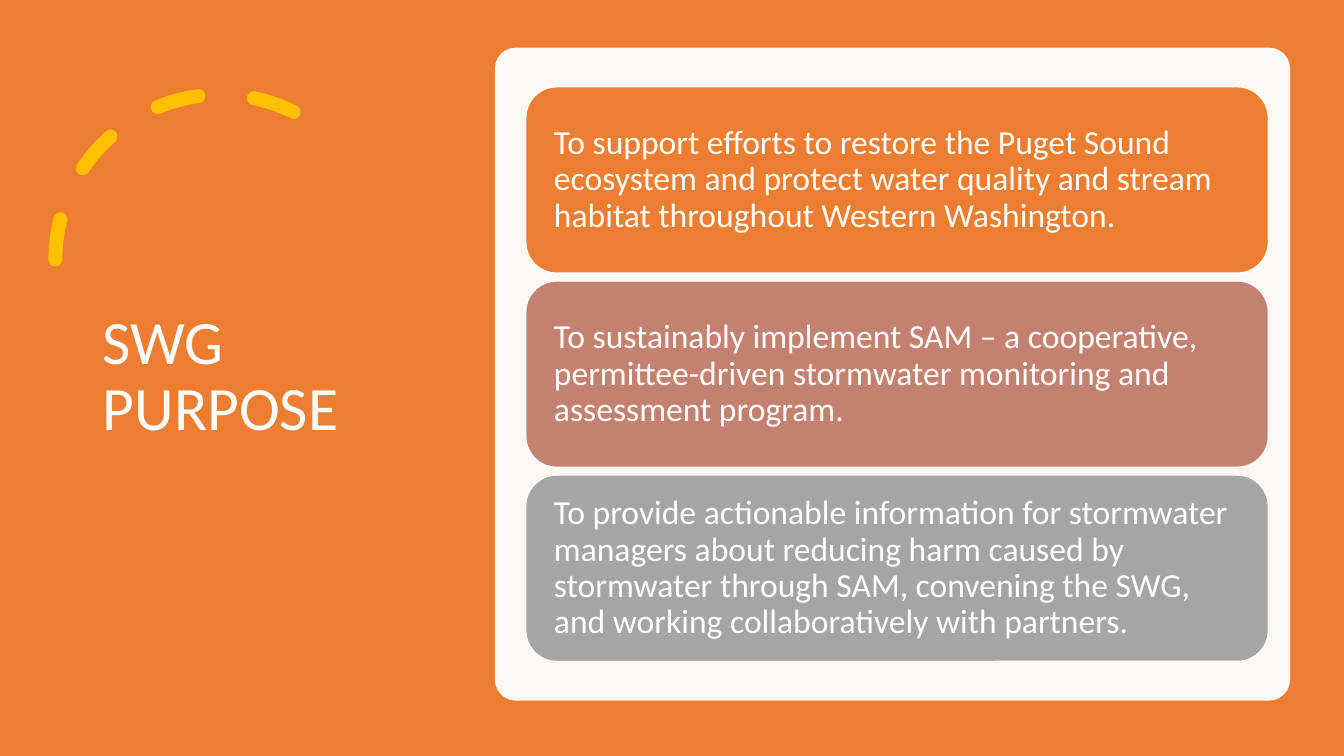
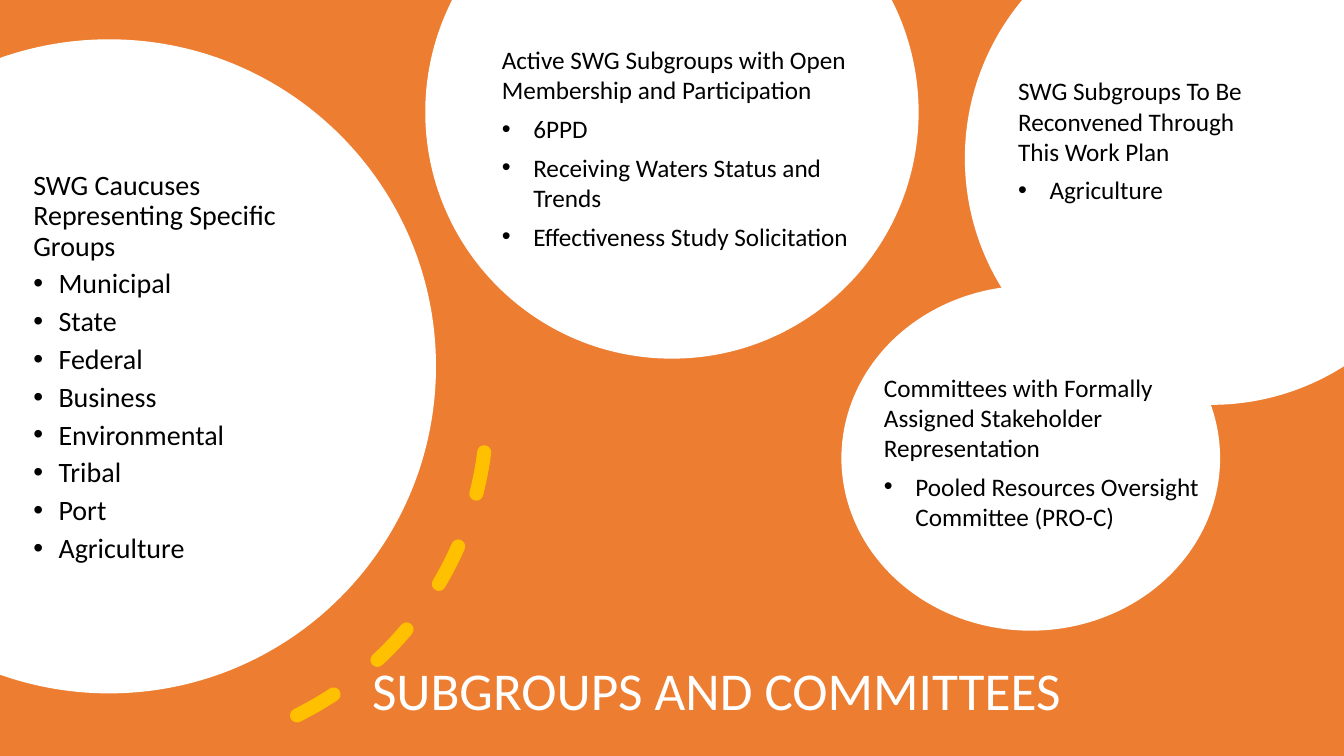
from math import cos, radians, sin, tan

from pptx import Presentation
from pptx.dml.color import RGBColor
from pptx.enum.dml import MSO_LINE
from pptx.enum.shapes import MSO_SHAPE
from pptx.enum.text import MSO_ANCHOR, MSO_AUTO_SIZE, PP_ALIGN
from pptx.oxml.ns import qn
from pptx.util import Pt
from lxml import etree

ROUNDED, OVAL, ARC = MSO_SHAPE.ROUNDED_RECTANGLE, MSO_SHAPE.OVAL, MSO_SHAPE.ARC
TOP, MIDDLE, BOTTOM = MSO_ANCHOR.TOP, MSO_ANCHOR.MIDDLE, MSO_ANCHOR.BOTTOM
LEFT, CENTER = PP_ALIGN.LEFT, PP_ALIGN.CENTER
DASH, NO_FIT = MSO_LINE.DASH, MSO_AUTO_SIZE.NONE

WIDTH, HEIGHT = 960, 540
FONT = "Calibri"
ORANGE, ROSE, GRAY = "ED7D31", "C48170", "A5A5A5"
WHITE, BLACK, GOLD = "FFFFFF", "000000", "FFC000"
COMPARISON, TITLE_ONLY = 4, 5

PURPOSES = [
    (ORANGE, "To support efforts to restore the Puget Sound ecosystem and protect "
             "water quality and stream habitat throughout Western Washington."),
    (ROSE, "To sustainably implement SAM – a cooperative, permittee-driven "
           "stormwater monitoring and assessment program."),
    (GRAY, "To provide actionable information for stormwater managers about reducing "
           "harm caused by stormwater through SAM, convening the SWG, and working "
           "collaboratively with partners."),
]
CAUCUSES = ["SWG Caucuses Representing Specific Groups", "Municipal", "State", "Federal",
            "Business", "Environmental", "Tribal", "Port", "Agriculture"]
ACTIVE = ["Active SWG Subgroups with Open Membership and Participation", "6PPD",
          "Receiving Waters Status and Trends", "Effectiveness Study Solicitation"]
RECONVENED = ["SWG Subgroups To Be Reconvened Through This Work Plan", "Agriculture"]
COMMITTEES = ["Committees with Formally Assigned Stakeholder Representation",
              "Pooled Resources Oversight Committee (PRO-C)"]


def paint(target, color):
    """Give a fill or line a solid colour."""
    target.solid()
    target.fore_color.rgb = RGBColor.from_string(color)


def place(box, left, top, width, height):
    """Move and size a box, in points."""
    box.left, box.top, box.width, box.height = map(Pt, (left, top, width, height))


def set_bullet(para, indent):
    """Set a hanging bullet, or none where the indent is zero."""
    props = para._p.get_or_add_pPr()
    props.set("marL", str(Pt(indent)))
    props.set("indent", str(-Pt(indent)))
    if indent:
        etree.SubElement(props, qn("a:buFont")).set("typeface", "Arial")
        etree.SubElement(props, qn("a:buChar")).set("char", "•")
    else:
        etree.SubElement(props, qn("a:buNone"))


def write(box, lines, size=18, color=BLACK, align=LEFT, anchor=TOP, spacing=1.0,
          before=0, after=0, indent=0, margins=(7.2, 3.6)):
    """Write a first line and the bullets that follow it."""
    frame = box.text_frame
    frame.word_wrap = True
    frame.auto_size = NO_FIT
    frame.vertical_anchor = anchor
    frame.margin_left = frame.margin_right = Pt(margins[0])
    frame.margin_top = frame.margin_bottom = Pt(margins[1])
    for number, line in enumerate(lines):
        para = frame.add_paragraph() if number else frame.paragraphs[0]
        para.alignment = align
        para.line_spacing = spacing
        para.space_before, para.space_after = Pt(before), Pt(after)
        set_bullet(para, indent if number else 0)
        span = para.add_run()
        span.text = line
        span.font.name, span.font.size, span.font.bold = FONT, Pt(size), False
        span.font.color.rgb = RGBColor.from_string(color)


def add_title(page, text, box, **text_format):
    """Move and fill the title placeholder."""
    place(page.shapes.title, *box)
    write(page.shapes.title, [text], color=WHITE, spacing=0.9, **text_format)


def add_block(page, kind, box, color, line=None):
    """Add a filled preset shape."""
    block = page.shapes.add_shape(kind, *map(Pt, box))
    block.shadow.inherit = False
    paint(block.fill, color)
    if line:
        paint(block.line.fill, line)
        block.line.width = Pt(1)
    else:
        block.line.fill.background()
    return block


def add_dashed_arc(page, box, angles, rotation=0, flip=False):
    """Add a round-capped dashed arc between two angles in degrees."""
    arc = page.shapes.add_shape(ARC, *map(Pt, box))
    arc.shadow.inherit = False
    arc.fill.background()
    for number, angle in enumerate(angles):
        arc.adjustments[number] = angle * 0.6
    paint(arc.line.fill, GOLD)
    arc.line.width = Pt(10)
    arc.line.dash_style = DASH
    arc.line._ln.set("cap", "rnd")
    arc.rotation = rotation
    if flip:
        arc._element.spPr.find(qn("a:xfrm")).set("flipH", "1")


def curve_points(center, radius, start, end):
    """List the Bezier points of an arc, split at the quarter turns."""
    def point(angle, pull=0):
        """Find a point on the circle, pulled along its tangent."""
        across, down = cos(radians(angle)), sin(radians(angle))
        return (Pt(center[0] + radius * (across - pull * down)),
                Pt(center[1] + radius * (down + pull * across)))

    stops = [start, *(turn for turn in range(-90, 271, 90) if start < turn < end), end]
    points = [point(start)]
    for first, last in zip(stops, stops[1:]):
        pull = 4 / 3 * tan(radians(last - first) / 4)
        points += [point(first, pull), point(last, -pull), point(last)]
    return points


def add_cropped_disc(page, center, radius, start, end, corners=()):
    """Add a white disc cut off at the edges of the page."""
    points = curve_points(center, radius, start, end)
    builder = page.shapes.build_freeform(*points[0])
    edges = [(Pt(across), Pt(down)) for across, down in corners]
    builder.add_line_segments(points[1:] + edges, close=True)
    disc = builder.convert_to_shape()
    disc.shadow.inherit = False
    paint(disc.fill, WHITE)
    disc.line.fill.background()
    lines = list(disc._element.iter(qn("a:lnTo")))[:len(points) - 1]
    for first in range(0, len(lines), 3):
        curve = etree.Element(qn("a:cubicBezTo"))
        lines[first].addprevious(curve)
        for line in lines[first:first + 3]:
            curve.append(line[0])
            line.getparent().remove(line)


def add_list(page, index, lines, box, **text_format):
    """Fill a body placeholder and bring it in front of the discs."""
    body = page.placeholders[index]
    page.shapes._spTree.append(body._element)
    place(body, *box)
    write(body, lines, **text_format)


def add_card_panel(page, box, cards):
    """Add a pale panel with a stack of equal cards."""
    left, top, width, height = box
    panel = add_block(page, ROUNDED, box, WHITE)
    panel.adjustments[0] = 0.032
    shade = panel._element.spPr.find(qn("a:solidFill"))[0]
    etree.SubElement(shade, qn("a:alpha")).set("val", "95000")
    side, edge, gap = 22, 28, 5.5
    card_height = (height - 2 * edge - gap * (len(cards) - 1)) / len(cards)
    for number, (color, text) in enumerate(cards):
        card_top = top + edge + number * (card_height + gap)
        card = add_block(page, ROUNDED, (left + side, card_top, width - 2 * side + 6.5,
                                         card_height), color, line=WHITE)
        write(card, [text], size=24, color=WHITE, anchor=MIDDLE, spacing=0.9,
              margins=(13.7, 13.7))


def build_purpose(deck):
    """Build the slide with the purpose cards."""
    page = deck.slides.add_slide(deck.slide_layouts[TITLE_ONLY])
    add_dashed_arc(page, (39.6, 67.7, 235.4, 235.4), (243.55, 0), flip=True)
    add_title(page, "SWG PURPOSE", (66.2, 50.4, 232.6, 438.5), size=44, anchor=MIDDLE)
    add_card_panel(page, (353.5, 34, 568, 466.5), PURPOSES)


def build_subgroups(deck):
    """Build the slide with the groups in discs."""
    page = deck.slides.add_slide(deck.slide_layouts[COMPARISON])
    add_title(page, "SUBGROUPS AND COMMITTEES", (245.5, 427, 532.8, 92.2),
              size=38, align=CENTER, anchor=BOTTOM)
    add_cropped_disc(page, (77.8, 261.7), 233.6, -109.45, 109.45)
    add_cropped_disc(page, (480, 80), 176.2, -27, 207)
    add_cropped_disc(page, (865.4, 113), 176.2, 57.53, 219.89, corners=[(WIDTH, 0)])
    add_block(page, OVAL, (601, 204, 270.5, 246.5), WHITE)
    add_dashed_arc(page, (-140.4, 48.2, 488.2, 488.2), (240.93, 306.49), rotation=126.3)
    add_list(page, 1, CAUCUSES, (16.6, 118.8, 236.2, 309.6), size=20, spacing=0.9,
             before=5.4, indent=18)
    for index, lines, box in [
        (2, ACTIVE, (351.2, 28.1, 272.9, 203)),
        (3, RECONVENED, (720, 50.4, 202.3, 100.8)),
        (4, COMMITTEES, (624.2, 262, 247, 122.4)),
    ]:
        add_list(page, index, lines, box, after=6, indent=22.5)


def main():
    """Build and save the deck."""
    deck = Presentation()
    deck.slide_width, deck.slide_height = Pt(WIDTH), Pt(HEIGHT)
    paint(deck.slide_master.background.fill, ORANGE)
    build_purpose(deck)
    build_subgroups(deck)
    deck.save("out.pptx")


if __name__ == "__main__":
    main()
